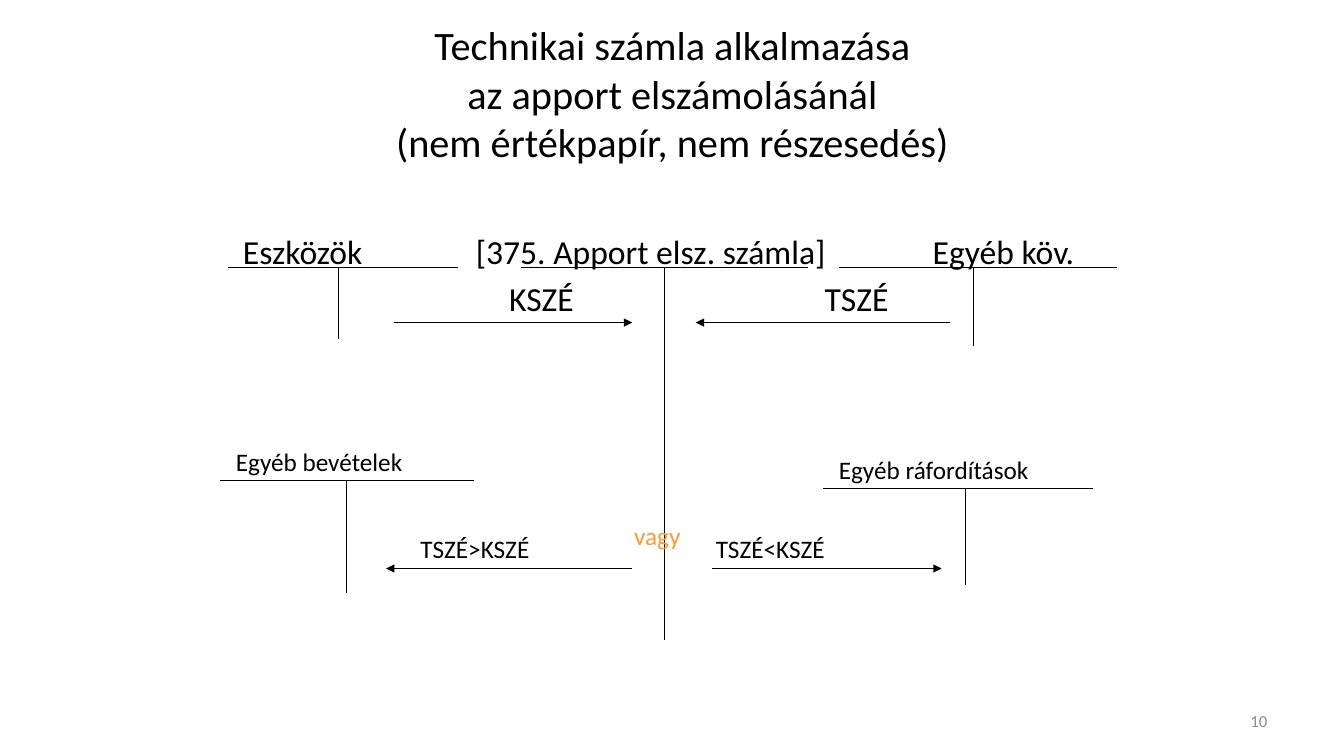
from lxml.etree import SubElement
from pptx import Presentation
from pptx.dml.color import RGBColor
from pptx.enum.shapes import MSO_CONNECTOR as CONNECTOR
from pptx.enum.text import MSO_ANCHOR as ANCHOR, MSO_AUTO_SIZE as AUTO_SIZE, PP_ALIGN as ALIGN
from pptx.oxml.ns import qn
from pptx.util import Pt

PX = 9144
FONT = "Calibri"
BLACK = "000000"
ORANGE = "FF9933"
GRAY = "8C8C8C"


def px(*lengths):
    return [length * PX for length in lengths]


def color(value):
    return RGBColor.from_string(value)


def style(para, size, hue, align):
    para.alignment = align
    para.font.name = FONT
    para.font.size = Pt(size)
    para.font.color.rgb = color(hue)


def add_title(page, text):
    title = page.shapes.title
    title.left, title.top, title.width, title.height = px(67, 30, 1200, 125)
    frame = title.text_frame
    frame.text = text
    frame.auto_size = AUTO_SIZE.NONE
    frame.vertical_anchor = ANCHOR.MIDDLE
    style(frame.paragraphs[0], 28.8, BLACK, ALIGN.CENTER)


def add_label(page, text, left, top, width, size=18, hue=BLACK, align=ALIGN.LEFT):
    box = page.shapes.add_textbox(*px(left, top, width, 40))
    frame = box.text_frame
    frame.word_wrap = True
    frame.margin_left = frame.margin_right = frame.margin_top = frame.margin_bottom = 0
    para = frame.paragraphs[0]
    para.text = text
    style(para, size, hue, align)


def add_line(page, x1, y1, x2, y2, arrow=False):
    line = page.shapes.add_connector(CONNECTOR.STRAIGHT, *px(x1, y1, x2, y2))
    line.line.color.rgb = color(BLACK)
    line.line.width = Pt(0.75)
    if arrow:
        SubElement(line.line._get_or_add_ln(), qn("a:tailEnd"), type="triangle")
    SubElement(line._element.spPr, qn("a:effectLst"))


def add_account(page, name, name_left, size, left, right, top, stem, bottom):
    add_label(page, name, name_left, top - 28 - size // 3, 370, size)
    add_line(page, left, top, right, top)
    add_line(page, stem, top, stem, bottom)


def add_posting(page, text, text_left, text_top, size, start, end, y):
    add_label(page, text, text_left, text_top, 150, size)
    add_line(page, start, y, end, y, arrow=True)


def main():
    deck = Presentation()
    deck.slide_width, deck.slide_height = px(1333, 750)
    page = deck.slides.add_slide(deck.slide_layouts[5])

    add_title(page, "Technikai számla alkalmazása\vaz apport elszámolásánál\v"
                    "(nem értékpapír, nem részesedés)")

    accounts = [
        ("Eszközök", 241, 24, 226, 454, 265, 336, 336),
        ("[375. Apport elsz. számla]", 472, 24, 517, 801, 265, 659, 635),
        ("Egyéb köv.", 925, 24, 832, 1108, 265, 966, 343),
        ("Egyéb bevételek", 234, 18, 218, 470, 477, 344, 588),
        ("Egyéb ráfordítások", 832, 18, 816, 1084, 485, 958, 580),
    ]
    for account in accounts:
        add_account(page, *account)

    postings = [
        ("KSZÉ", 505, 276, 24, 391, 627, 320),
        ("TSZÉ", 818, 276, 24, 942, 690, 320),
        ("TSZÉ>KSZÉ", 417, 529, 18, 627, 383, 564),
        ("TSZÉ<KSZÉ", 710, 529, 18, 706, 934, 564),
    ]
    for posting in postings:
        add_posting(page, *posting)

    add_label(page, "vagy", 629, 516, 60, hue=ORANGE)
    add_label(page, "10", 956, 705, 301, size=12, hue=GRAY, align=ALIGN.RIGHT)
    deck.save("out.pptx")


if __name__ == "__main__":
    main()
